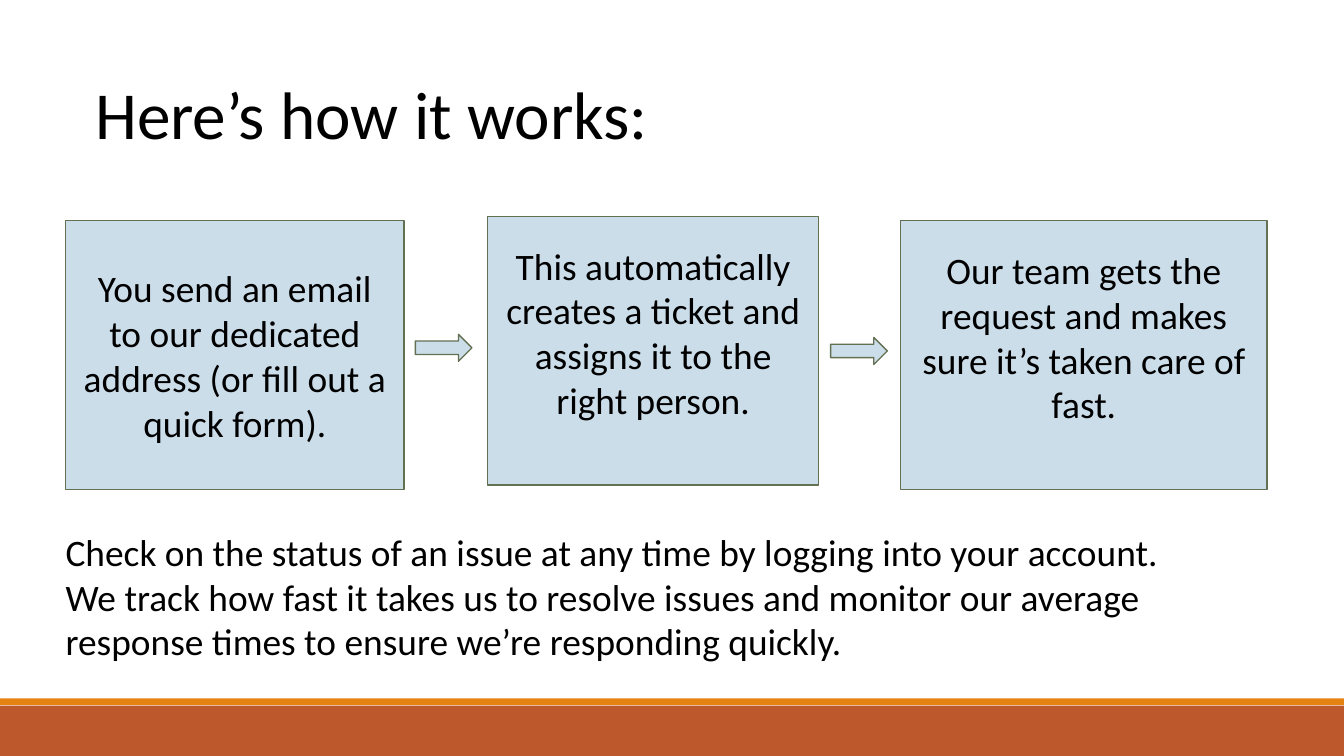
import pptx
import pptx.util
import pptx.dml.color
import pptx.enum.shapes
import pptx.enum.text
from dataclasses import dataclass

Cm = pptx.util.Cm
Pt = pptx.util.Pt
Kind = pptx.enum.shapes.MSO_SHAPE
Align = pptx.enum.text.PP_ALIGN
Anchor = pptx.enum.text.MSO_ANCHOR


# Colours and type sizes
@dataclass(frozen=True)
class Theme:
    font: str = "Calibri"
    ink: str = "000000"
    box: str = "CCDDEA"
    edge: str = "637052"
    base: str = "BD582C"
    strip: str = "E48312"
    head: float = 36
    body: float = 20
    line: float = 0.75


THEME = Theme()
WIDE, HIGH = 25.4, 14.29
PAD = 0.25
LIFT = 0.94  # deeper bottom inset that raises the text of a step

# Steps: text, left, top, width, bottom inset
STEPS = [
    ("You send an email to our dedicated address (or fill out a quick form).",
     1.24, 4.17, 6.4, PAD),
    ("This automatically creates a ticket and assigns it to the right person.",
     9.22, 4.09, 6.25, LIFT),
    ("Our team gets the request and makes sure it’s taken care of fast.",
     17.02, 4.17, 6.93, LIFT),
]
STEP_HIGH = 5.08
ARROWS = [(7.85, 6.32), (15.7, 6.38)]
NOTES = [
    "Check on the status of an issue at any time by logging into your account.",
    "We track how fast it takes us to resolve issues and monitor our average "
    "response times to ensure we’re responding quickly.",
]


def tint(hue):
    return pptx.dml.color.RGBColor.from_string(hue)


def apply(item, form):
    for name, value in form.items():
        setattr(item, name, value)


def write(shape, lines, size, align=Align.LEFT, anchor=Anchor.TOP, foot=PAD):
    """Fill a shape with one paragraph per line."""
    frame = shape.text_frame
    apply(frame, {
        "word_wrap": True, "vertical_anchor": anchor,
        "margin_left": Cm(PAD), "margin_right": Cm(PAD),
        "margin_top": Cm(PAD), "margin_bottom": Cm(foot),
    })
    frame.text = "\n".join(lines)
    for para in frame.paragraphs:
        para.alignment = align
        for run in para.runs:
            apply(run.font, {"name": THEME.font, "size": Pt(size)})
            run.font.color.rgb = tint(THEME.ink)


def add_text(slide, area, lines, size):
    write(slide.shapes.add_textbox(*map(Cm, area)), lines, size)


def add_form(slide, kind, area, fill, edge=None):
    """Draw a flat preset shape, outlined if an edge colour is given."""
    shape = slide.shapes.add_shape(kind, *map(Cm, area))
    shape.shadow.inherit = False
    shape.fill.solid()
    shape.fill.fore_color.rgb = tint(fill)
    if edge:
        shape.line.color.rgb = tint(edge)
        shape.line.width = Pt(THEME.line)
    else:
        shape.line.fill.background()
    return shape


def add_step(slide, text, left, top, width, foot):
    box = add_form(slide, Kind.RECTANGLE, (left, top, width, STEP_HIGH),
                   THEME.box, THEME.edge)
    write(box, [text], THEME.body, Align.CENTER, Anchor.MIDDLE, foot)


def main():
    deck = pptx.Presentation()
    apply(deck, {"slide_width": Cm(WIDE), "slide_height": Cm(HIGH)})
    slide = deck.slides.add_slide(deck.slide_layouts[6])

    # Footer bands
    for top, high, hue in [(13.34, 0.95, THEME.base), (13.2, 0.13, THEME.strip)]:
        add_form(slide, Kind.RECTANGLE, (0, top, WIDE, high), hue)

    # Title
    add_text(slide, (1.55, 1.12, 21.84, 2.06), ["Here’s how it works:"], THEME.head)

    # Steps and the arrows between them
    for step in STEPS:
        add_step(slide, *step)
    for left, top in ARROWS:
        add_form(slide, Kind.RIGHT_ARROW, (left, top, 1.07, 0.51),
                 THEME.box, THEME.edge)

    # Closing notes
    add_text(slide, (0.99, 9.75, 23.42, 3.68), NOTES, THEME.body)

    deck.save("out.pptx")


if __name__ == "__main__":
    main()
